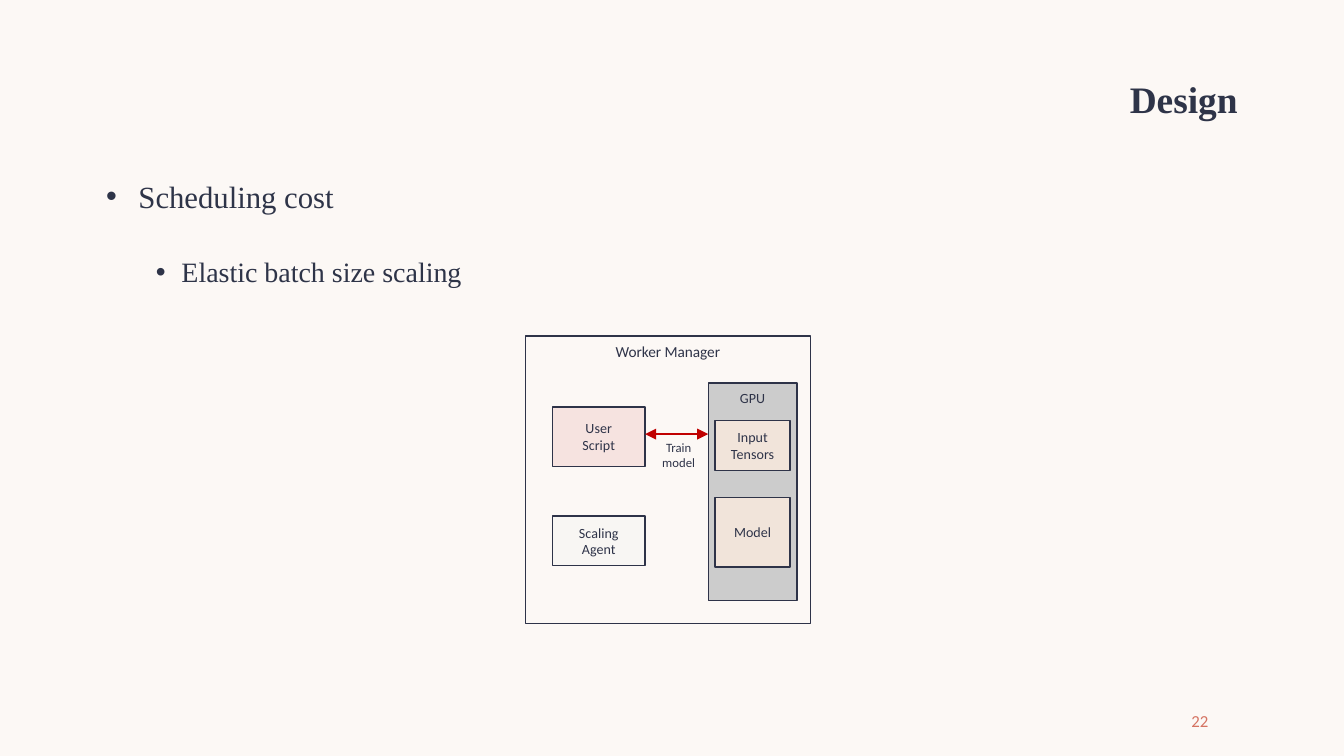
from lxml import etree
from pptx import Presentation
from pptx import util as u
from pptx.dml.color import RGBColor
from pptx.enum import shapes, text
from pptx.oxml import ns

NAVY, INK = "2E3448", "2E3348"
MIDDLE, TOP = text.MSO_ANCHOR.MIDDLE, text.MSO_ANCHOR.TOP
CENTER, RIGHT = text.PP_ALIGN.CENTER, text.PP_ALIGN.RIGHT


def color(value):
    return RGBColor.from_string(value)


def write(holder, lines, size, hue=INK, face="Calibri", bold=False, align=CENTER, anchor=TOP):
    frame = holder.text_frame
    frame.text = lines
    layout = {
        "word_wrap": True,
        "auto_size": text.MSO_AUTO_SIZE.NONE,
        "vertical_anchor": anchor,
        "margin_left": u.Inches(0.1),
        "margin_right": u.Inches(0.1),
        "margin_top": u.Inches(0.05),
        "margin_bottom": u.Inches(0.05),
    }
    for key, value in layout.items():
        setattr(frame, key, value)
    for line in frame.paragraphs:
        line.alignment = align
        for run in line.runs:
            for key, value in {"size": u.Pt(size), "name": face, "bold": bold}.items():
                setattr(run.font, key, value)
            run.font.color.rgb = color(hue)


deck = Presentation()
deck.slide_width = u.Inches(10)
deck.slide_height = deck.slide_width * 9 // 16
slide = deck.slides.add_slide(deck.slide_layouts[1])
slide.background.fill.solid()
slide.background.fill.fore_color.rgb = color("FCF8F5")

heading, points = slide.shapes.title, slide.placeholders[1]
for holder, top, height in [(heading, 0.36, 0.79), (points, 1.3, 3.77)]:
    holder.left, holder.top = u.Inches(0.69), u.Inches(top)
    holder.width, holder.height = u.Inches(8.62), u.Inches(height)

write(heading, "Design", 20, NAVY, "Times New Roman", True, RIGHT, MIDDLE)
heading.text_frame.paragraphs[0].line_spacing = 0.9

write(points, "Scheduling cost\nElastic batch size scaling", 16.5, NAVY,
      "Times New Roman", align=text.PP_ALIGN.LEFT)
bullet_levels = [(0, 0.24, 0.24, 0, 16.5), (1, 0.56, 0.19, 23.4, 15)]
for point, (level, margin, hanging, before, size) in zip(points.text_frame.paragraphs, bullet_levels):
    properties = point._p.get_or_add_pPr()
    properties.set("marL", str(u.Inches(margin)))
    properties.set("indent", str(-u.Inches(hanging)))
    etree.SubElement(properties, ns.qn("a:buChar")).set("char", "•")
    for key, value in {"level": level, "line_spacing": 0.9, "space_before": u.Pt(before)}.items():
        setattr(point, key, value)
    point.runs[0].font.size = u.Pt(size)

diagram = [
    ("Worker Manager", 3.91, 2.5, 2.12, 2.14, None, 8.2, TOP),
    ("User\nScript", 4.11, 3.03, 0.69, 0.44, "F6E3E0", 7.5, MIDDLE),
    ("Scaling Agent", 4.11, 3.84, 0.69, 0.37, "F8F6F3", 7.5, MIDDLE),
    ("GPU", 5.27, 2.85, 0.66, 1.62, "CCCCCC", 7.5, TOP),
    ("Input Tensors", 5.32, 3.13, 0.56, 0.37, "F1E4DA", 7.5, MIDDLE),
    ("Model", 5.32, 3.7, 0.56, 0.52, "F1E4DA", 7.5, MIDDLE),
]
for label, left, top, width, height, tint, size, anchor in diagram:
    component = slide.shapes.add_shape(
        shapes.MSO_SHAPE.RECTANGLE, *map(u.Inches, (left, top, width, height)))
    component.shadow.inherit = False
    if tint:
        component.fill.solid()
        component.fill.fore_color.rgb = color(tint)
    else:
        component.fill.background()
    component.line.color.rgb = color(INK)
    component.line.width = u.Pt(0.75)
    write(component, label, size, anchor=anchor)

training = slide.shapes.add_connector(
    shapes.MSO_CONNECTOR.STRAIGHT, *map(u.Inches, (4.8, 3.23, 5.27, 3.23)))
training.line.color.rgb = color("C00000")
training.line.width = u.Pt(1)
for end in ("a:headEnd", "a:tailEnd"):
    etree.SubElement(training.line._get_or_add_ln(), ns.qn(end)).set("type", "triangle")
etree.SubElement(training._element.spPr, ns.qn("a:effectLst"))

training_label = slide.shapes.add_textbox(*map(u.Inches, (4.8, 3.22, 0.5, 0.33)))
write(training_label, "Train model", 6.8)

page_number = slide.shapes.add_textbox(*map(u.Inches, (8.59, 5.21, 0.5, 0.3)))
write(page_number, "22", 9, "D57362", align=RIGHT, anchor=MIDDLE)

deck.save("out.pptx")
